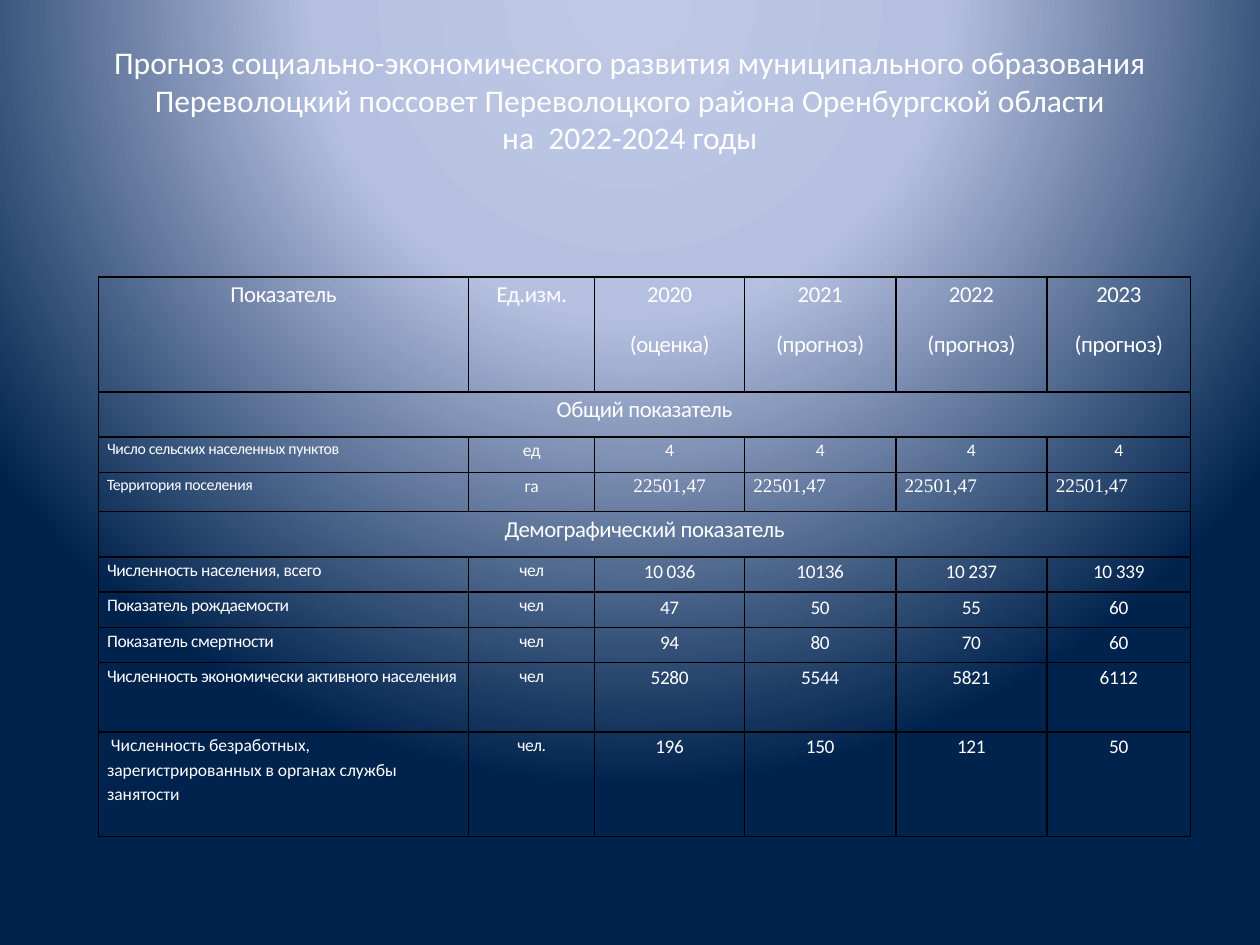
from dataclasses import dataclass

from pptx import Presentation
from pptx.dml.color import RGBColor
from pptx.enum.text import MSO_ANCHOR, PP_ALIGN
from pptx.oxml import parse_xml
from pptx.oxml.ns import nsdecls
from pptx.util import Inches, Pt


@dataclass(frozen=True)
class Theme:
    font: str = "Calibri"
    number_font: str = "Times New Roman"
    text: str = "FFFFFF"
    border: str = "000000"
    gradient: tuple = ((0, "BFC9E5"), (40, "B5C0E0"), (100, "00234D"))
    title: int = 18
    heading: int = 13
    value: int = 11
    label: int = 10
    small: int = 9
    tight: float = -0.2


THEME = Theme()
SLIDE_WIDTH, SLIDE_HEIGHT = 10, 7.5
TITLE_BOX = (0.5, 0.3, 9, 1.25)
TABLE_BOX = (0.78, 2.2, 8.67, 4.44)
COLUMN_WIDTHS = (2.94, 1, 1.19, 1.2, 1.2, 1.14)
ROW_HEIGHTS = (0.91, 0.36, 0.28, 0.31, 0.36, 0.28, 0.28, 0.28, 0.55, 0.83)

TITLE = (
    "Прогноз социально-экономического развития муниципального образования "
    "Переволоцкий поссовет Переволоцкого района Оренбургской области\v"
    "на  2022-2024 годы"
)
HEADER = ("Показатель", "Ед.изм.", "2020\n(оценка)", "2021\n(прогноз)",
          "2022\n(прогноз)", "2023\n(прогноз)")
SMALL_LABEL = {"label_size": THEME.small}
# Each entry is a section heading, or a row's texts with its own formats.
BODY = (
    "Общий показатель",
    (("Число сельских населенных пунктов", "ед", "4", "4", "4", "4"),
     {**SMALL_LABEL, "value_size": THEME.label}),
    (("Территория поселения", "га") + ("22501,47",) * 4,
     {**SMALL_LABEL, "value_font": THEME.number_font, "value_spacing": 0,
      "later_align": PP_ALIGN.LEFT}),
    "Демографический показатель",
    (("Численность населения, всего", "чел", "10 036", "10136", "10 237", "10 339"), {}),
    (("Показатель рождаемости", "чел", "47", "50", "55", "60"), {}),
    (("Показатель смертности", "чел", "94", "80", "70", "60"), {}),
    (("Численность экономически активного населения", "чел",
      "5280", "5544", "5821", "6112"), {}),
    ((" Численность безработных, зарегистрированных в органах службы занятости",
      "чел.", "196", "150", "121", "50"), {"label_spacing": 0}),
)


def write_text(frame, text, *, size, font=THEME.font, align=PP_ALIGN.CENTER,
               spacing=0, line_spacing=None, space_after=None):
    """Fill a text frame; a newline starts a paragraph, \\v breaks a line."""
    frame.word_wrap = True
    frame.text = text
    for paragraph in frame.paragraphs:
        paragraph.alignment = align
        paragraph.line_spacing = line_spacing
        paragraph.space_after = space_after
        for run in paragraph.runs:
            run.font.size = Pt(size)
            run.font.name = font
            run.font.color.rgb = RGBColor.from_string(THEME.text)
            run.font._element.set("spc", str(round(spacing * 100)))


def paint_background(slide):
    """Radial gradient centred above the slide."""
    stops = "".join(
        f'<a:gs pos="{share * 1000}"><a:srgbClr val="{color}"/></a:gs>'
        for share, color in THEME.gradient
    )
    slide._element.cSld.insert(0, parse_xml(
        f'<p:bg {nsdecls("p", "a")}><p:bgPr><a:gradFill rotWithShape="1">'
        f'<a:gsLst>{stops}</a:gsLst><a:path path="circle">'
        '<a:fillToRect l="50000" t="-80000" r="50000" b="180000"/></a:path>'
        '</a:gradFill><a:effectLst/></p:bgPr></p:bg>'
    ))


def add_title(slide, box):
    frame = slide.shapes.add_textbox(*map(Inches, box)).text_frame
    frame.vertical_anchor = MSO_ANCHOR.MIDDLE
    frame.margin_bottom = Inches(0.32)
    write_text(frame, TITLE, size=THEME.title)


def style_cell(cell):
    properties = cell._tc.get_or_add_tcPr()
    for side in "LRTB":
        properties.append(parse_xml(
            f'<a:ln{side} {nsdecls("a")} w="{Pt(1)}"><a:solidFill>'
            f'<a:srgbClr val="{THEME.border}"/></a:solidFill></a:ln{side}>'
        ))
    cell.fill.background()
    cell.margin_left = cell.margin_right = Inches(0.07)
    cell.margin_top = cell.margin_bottom = 0


def write_cell(cell, text, **text_format):
    write_text(cell.text_frame, text, line_spacing=1.15, space_after=Pt(10),
               **text_format)


def write_heading(cell, text):
    write_cell(cell, text, size=THEME.heading, spacing=THEME.tight)


def write_indicator(cells, texts, *, label_size=THEME.label,
                    label_spacing=THEME.tight, value_size=THEME.value,
                    value_font=THEME.font, value_spacing=THEME.tight,
                    later_align=PP_ALIGN.CENTER):
    """Write label, unit and yearly values; later_align is for years after the first."""
    write_cell(cells[0], texts[0], size=label_size, align=PP_ALIGN.LEFT,
               spacing=label_spacing)
    write_cell(cells[1], texts[1], size=THEME.label, spacing=THEME.tight)
    for index, text in enumerate(texts[2:]):
        write_cell(cells[index + 2], text, size=value_size, font=value_font,
                   spacing=value_spacing,
                   align=later_align if index else PP_ALIGN.CENTER)


def add_forecast_table(slide, box):
    table = slide.shapes.add_table(
        len(ROW_HEIGHTS), len(COLUMN_WIDTHS), *map(Inches, box)).table
    table.first_row = table.horz_banding = False
    for column, width in zip(table.columns, COLUMN_WIDTHS):
        column.width = Inches(width)
    for row, height in zip(table.rows, ROW_HEIGHTS):
        row.height = Inches(height)
    for cell in table.iter_cells():
        style_cell(cell)

    header_row, *body_rows = table.rows
    for cell, text in zip(header_row.cells, HEADER):
        write_heading(cell, text)
    for row, entry in zip(body_rows, BODY):
        cells = list(row.cells)
        if isinstance(entry, str):
            cells[0].merge(cells[-1])
            write_heading(cells[0], entry)
        else:
            texts, formats = entry
            write_indicator(cells, texts, **formats)


def main():
    presentation = Presentation()
    presentation.slide_width = Inches(SLIDE_WIDTH)
    presentation.slide_height = Inches(SLIDE_HEIGHT)
    slide = presentation.slides.add_slide(presentation.slide_layouts[6])
    paint_background(slide)
    add_title(slide, TITLE_BOX)
    add_forecast_table(slide, TABLE_BOX)
    presentation.save("out.pptx")


if __name__ == "__main__":
    main()
